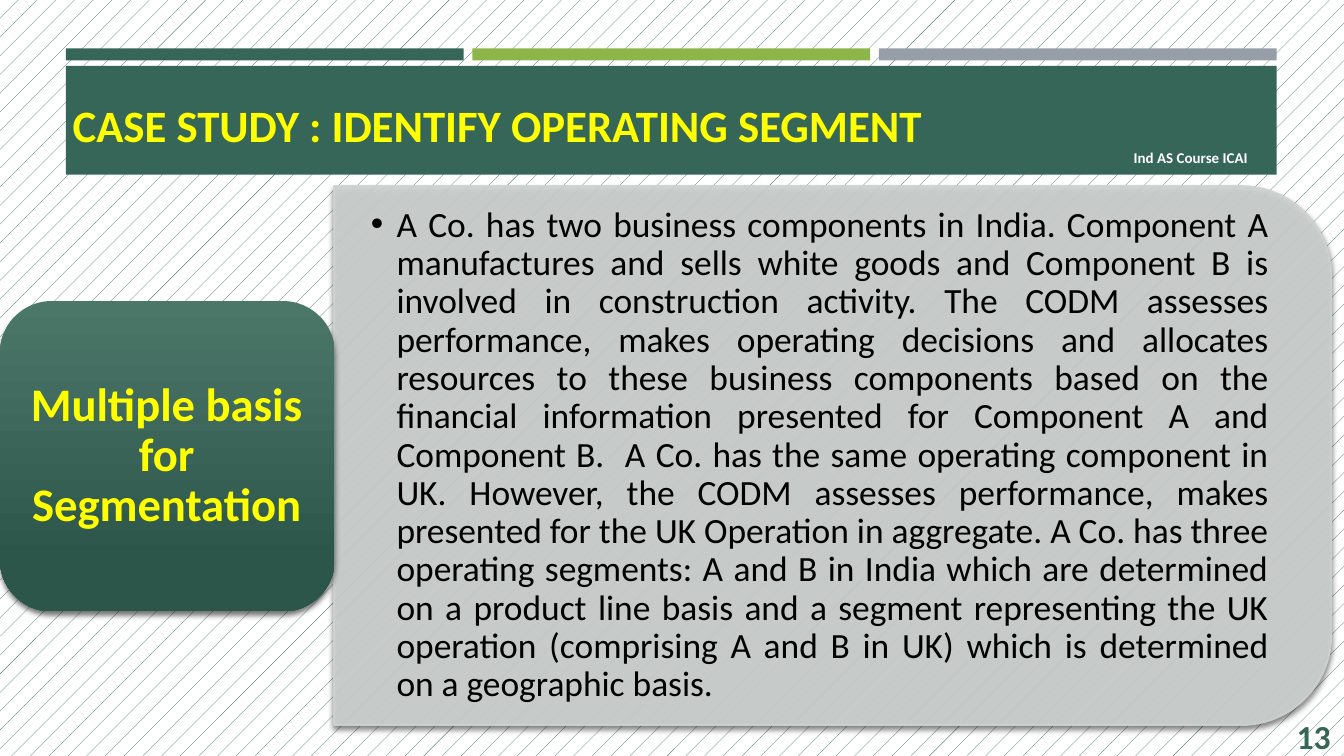
from lxml import etree
from pptx import Presentation
from pptx.dml.color import RGBColor
from pptx.enum.dml import MSO_PATTERN
from pptx.enum.shapes import MSO_SHAPE
from pptx.enum.text import MSO_ANCHOR, MSO_AUTO_SIZE, PP_ALIGN
from pptx.oxml.ns import qn
from pptx.util import Inches, Pt

RECT = MSO_SHAPE.RECTANGLE
ROUNDED = MSO_SHAPE.ROUNDED_RECTANGLE
TWO_ROUNDED = MSO_SHAPE.ROUND_2_SAME_RECTANGLE
LEFT, CENTER = PP_ALIGN.LEFT, PP_ALIGN.CENTER
RIGHT, JUSTIFY = PP_ALIGN.RIGHT, PP_ALIGN.JUSTIFY
MIDDLE, NO_FIT = MSO_ANCHOR.MIDDLE, MSO_AUTO_SIZE.NONE
HATCH = MSO_PATTERN.PERCENT_5

FONT = "Calibri"
COLORS = {
    "green": "366658",
    "lime": "8CB64A",
    "gray": "969FA7",
    "panel": "CED3D1",
    "light_green": "4B7769",
    "dark_green": "2D564A",
    "yellow": "FFFF00",
    "white": "FFFFFF",
    "black": "000000",
}
CASE_TEXT = (
    "A Co. has two business components in India. Component A manufactures and "
    "sells white goods and Component B is involved in construction activity. "
    "The CODM assesses performance, makes operating decisions and allocates "
    "resources to these business components based on the financial information "
    "presented for Component A and Component B.  A Co. has the same operating "
    "component in UK. However, the CODM assesses performance, makes presented "
    "for the UK Operation in aggregate. A Co. has three operating segments: "
    "A and B in India which are determined on a product line basis and a segment "
    "representing the UK operation (comprising A and B in UK) which is determined "
    "on a geographic basis."
)


def color(name):
    return RGBColor.from_string(COLORS[name])


def place(shape, left, top, width, height):
    shape.left, shape.top = Inches(left), Inches(top)
    shape.width, shape.height = Inches(width), Inches(height)


def add_block(page, kind, at, fill=None):
    """Add a preset shape without outline or shadow."""
    block = page.shapes.add_shape(kind, *map(Inches, at))
    block.shadow.inherit = False
    block.line.fill.background()
    if fill:
        block.fill.solid()
        block.fill.fore_color.rgb = color(fill)
    return block


def add_shadow(shape):
    effects = shape._element.spPr.find(qn("a:effectLst"))
    shadow = etree.SubElement(effects, qn("a:outerShdw"), blurRad=str(Pt(3)),
                              dist=str(Pt(2)), dir="5400000", rotWithShape="0")
    shade = etree.SubElement(shadow, qn("a:srgbClr"), val=COLORS["black"])
    etree.SubElement(shade, qn("a:alpha"), val="55000")


def set_opacity(shape, percent):
    """Apply the opacity to both the fill and the outline."""
    for shade in shape._element.spPr.iter(qn("a:srgbClr")):
        etree.SubElement(shade, qn("a:alpha"), val=str(percent * 1000))


def add_bullet(para, indent):
    props = para._p.get_or_add_pPr()
    props.set("marL", str(Inches(indent)))
    props.set("indent", str(-Inches(indent)))
    etree.SubElement(props, qn("a:buChar"), char="•")


def write(shape, text, size, shade, align, bold=True, spacing=1.0,
          insets=(0.1, 0.05), bullet_indent=None):
    frame = shape.text_frame
    frame.word_wrap = True
    frame.auto_size = NO_FIT
    frame.vertical_anchor = MIDDLE
    frame.margin_left = frame.margin_right = Inches(insets[0])
    frame.margin_top = frame.margin_bottom = Inches(insets[1])
    para = frame.paragraphs[0]
    para.text = text
    para.alignment = align
    para.line_spacing = spacing
    para.space_before = Pt(0)
    if bullet_indent:
        add_bullet(para, bullet_indent)
    para.font.name = FONT
    para.font.size = Pt(size)
    para.font.bold = bold
    para.font.color.rgb = color(shade)


def add_text(page, at, *args, **options):
    box = page.shapes.add_textbox(*map(Inches, at))
    write(box, *args, **options)


def fill_placeholder(page, holder, at, *args, **options):
    """Move a placeholder to its place, in front of the shapes so far."""
    place(holder, *at)
    page.shapes._spTree.append(holder._element)
    write(holder, *args, **options)


def add_header(page):
    for column, shade in enumerate(("green", "lime", "gray")):
        add_block(page, RECT, (0.49 + 3.025 * column, 0.36, 2.96, 0.09), shade)
    add_block(page, RECT, (0.49, 0.49, 9.01, 0.81), "green")
    label = add_block(page, RECT, (8.27, 1.12, 1.18, 0.11), "green")
    write(label, "Ind AS Course ICAI", 8, "white", CENTER)
    fill_placeholder(page, page.shapes.title, (0.44, 0.55, 8.35, 0.75),
                     "CASE STUDY : IDENTIFY OPERATING SEGMENT", 24, "yellow", LEFT)


def add_case_panel(page):
    # Turned a quarter so that the rounded corners face right
    panel = add_block(page, TWO_ROUNDED, (4.19, -0.32, 4.01, 7.42), "panel")
    panel.rotation = 90
    panel.line.color.rgb = color("panel")
    panel.line.width = Pt(1)
    set_opacity(panel, 90)
    add_shadow(panel)
    fill_placeholder(page, page.placeholders[1], (2.49, 1.58, 7.22, 3.62),
                     CASE_TEXT, 19, "black", JUSTIFY, bold=False, spacing=0.9,
                     insets=(0.27, 0.14), bullet_indent=0.19)


def add_topic(page):
    topic = add_block(page, ROUNDED, (0, 2.24, 2.49, 2.31))
    topic.fill.gradient()
    topic.fill.gradient_angle = 270
    stops = ((0, "light_green"), (0.84, "dark_green"))
    for stop, (position, shade) in zip(topic.fill.gradient_stops, stops):
        stop.position = position
        stop.color.rgb = color(shade)
    add_shadow(topic)
    add_text(page, (0.11, 2.35, 2.26, 2.09), "Multiple basis for Segmentation",
             25, "yellow", CENTER, spacing=0.9)


def main():
    deck = Presentation()
    # Widescreen, 16:9
    deck.slide_width = Inches(10)
    deck.slide_height = Inches(10 * 9 / 16)
    page = deck.slides.add_slide(deck.slide_layouts[1])

    # Patterned background
    backdrop = page.background.fill
    backdrop.patterned()
    backdrop.pattern = HATCH
    backdrop.fore_color.rgb = color("green")
    backdrop.back_color.rgb = color("white")

    add_header(page)
    # Page number
    add_text(page, (9.16, 5.33, 0.84, 0.3), "13", 18, "green", RIGHT)
    add_case_panel(page)
    add_topic(page)
    deck.save("out.pptx")


if __name__ == "__main__":
    main()
